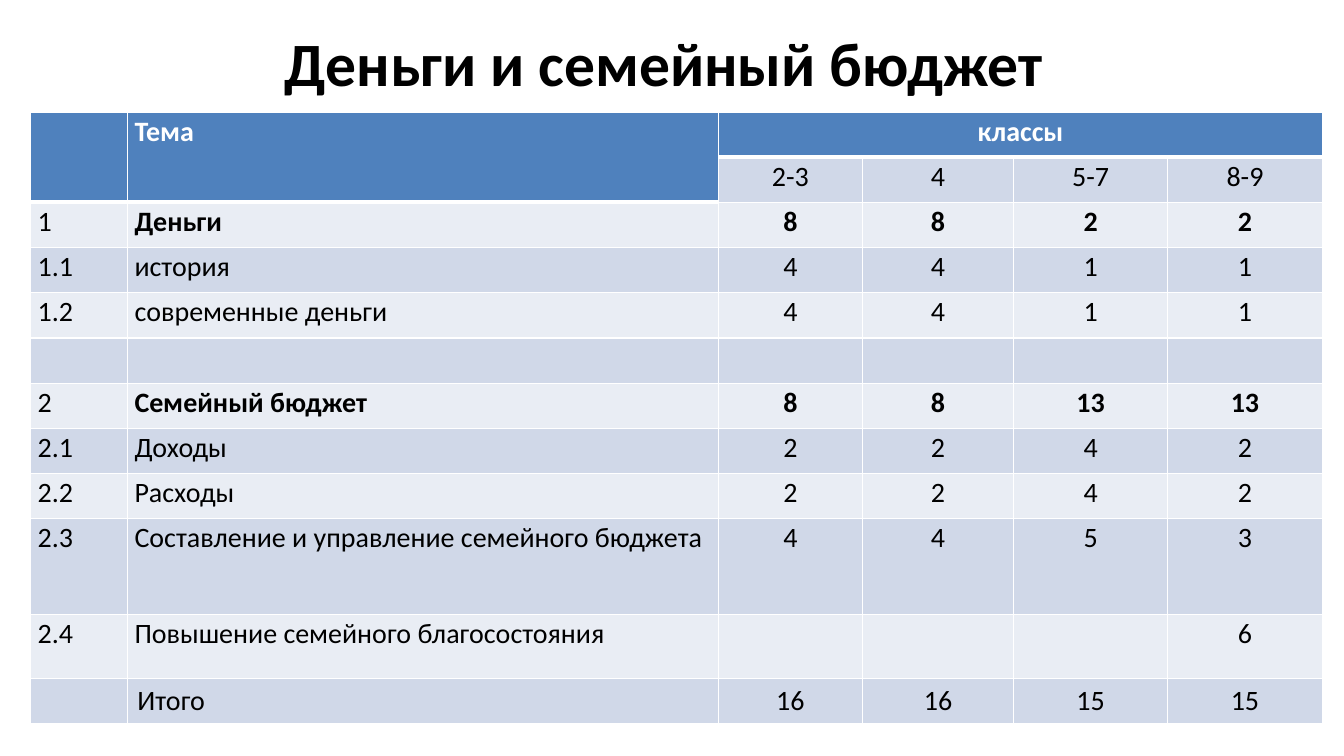
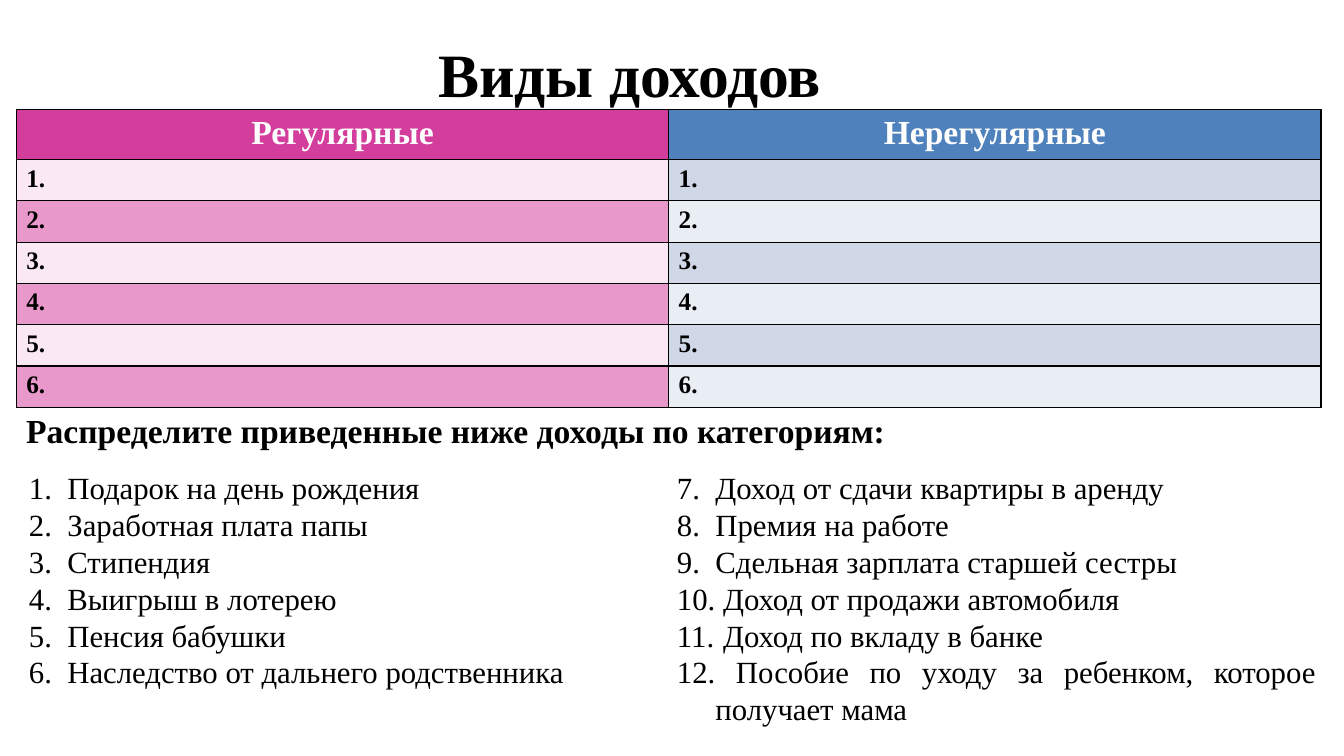
from dataclasses import dataclass

from pptx import Presentation
from pptx.dml.color import RGBColor as Rgb
from pptx.enum.text import MSO_ANCHOR as Anchor, PP_ALIGN as Align
from pptx.oxml.ns import qn
from pptx.util import Cm, Pt
from lxml.etree import SubElement as Sub


# Theme
@dataclass(frozen=True)
class Theme:
    sans: str = "Calibri"
    serif: str = "Times New Roman"
    black: str = "000000"
    white: str = "FFFFFF"
    blue: str = "4F81BD"
    blues: tuple = ("D0D8E8", "E9EDF4")
    pink: str = "D33E9C"
    pinks: tuple = ("FAE9F4", "E898CA")
    title: int = 44
    head: int = 24
    item: int = 22
    plan: int = 20
    slot: int = 18


T = Theme()

# Content
PLAN_TITLE = "Деньги и семейный бюджет"
PLAN = [
    ("", "Тема", "классы", "", "", ""),
    ("", "", "2-3", "4", "5-7", "8-9"),
    ("1", "Деньги", "8", "8", "2", "2"),
    ("1.1", "история", "4", "4", "1", "1"),
    ("1.2", "современные деньги", "4", "4", "1", "1"),
    ("", "", "", "", "", ""),
    ("2", "Семейный бюджет", "8", "8", "13", "13"),
    ("2.1", "Доходы", "2", "2", "4", "2"),
    ("2.2", "Расходы", "2", "2", "4", "2"),
    ("2.3", "Составление и управление семейного бюджета", "4", "4", "5", "3"),
    ("2.4", "Повышение семейного благосостояния", "", "", "", "6"),
    ("", "Итого", "16", "16", "15", "15"),
]
PLAN_COLS = (2.44, 14.9, 3.62, 3.82, 3.87, 3.91)
PLAN_ROWS = (1.14,) * 9 + (2.42, 1.6, 1.14)
BOLD_ROWS = (2, 6)

KIND_TITLE = "Виды доходов"
KINDS = [("Регулярные", T.pink, T.pinks), ("Нерегулярные", T.blue, T.blues)]
SLOTS = 6
TASK = "Распределите приведенные ниже доходы по категориям:"
INCOME = [
    ["Подарок на день рождения", "Заработная плата папы", "Стипендия",
     "Выигрыш в лотерею", "Пенсия бабушки",
     "Наследство от дальнего родственника"],
    ["Доход от сдачи квартиры в аренду", "Премия на работе",
     "Сдельная зарплата старшей сестры", " Доход от продажи автомобиля",
     " Доход по вкладу в банке",
     " Пособие по уходу за ребенком, которое получает мама"],
]


# Text helpers
def write(par, text, size, font, color=T.black, bold=False, align=Align.LEFT):
    par.alignment = align
    run = par.add_run()
    run.text = text
    run.font.size, run.font.name, run.font.bold = Pt(size), font, bold
    run.font.color.rgb = Rgb.from_string(color)


def add_box(slide, left, top, width, height, anchor=Anchor.TOP):
    box = slide.shapes.add_textbox(Cm(left), Cm(top), Cm(width), Cm(height))
    box.text_frame.word_wrap = True
    box.text_frame.vertical_anchor = anchor
    return box.text_frame


def add_title(slide, text, font, left, top, width, height):
    frame = add_box(slide, left, top, width, height, Anchor.MIDDLE)
    write(frame.paragraphs[0], text, T.title, font, bold=True,
          align=Align.CENTER)


def number(par, start):
    props = par._p.get_or_add_pPr()
    props.set("marL", str(Cm(0.97)))
    props.set("indent", str(-Cm(0.97)))
    Sub(props, qn("a:buFont"), typeface="+mj-lt")
    Sub(props, qn("a:buAutoNum"), type="arabicPeriod", startAt=str(start))


# Table helpers
def add_grid(slide, left, top, cols, rows):
    grid = slide.shapes.add_table(len(rows), len(cols), Cm(left), Cm(top),
                                  Cm(sum(cols)), Cm(sum(rows))).table
    grid.first_row = grid.horz_banding = False
    for col, width in zip(grid.columns, cols):
        col.width = Cm(width)
    for row, height in zip(grid.rows, rows):
        row.height = Cm(height)
    return grid


def paint(cell, fill, line, above=1, below=1):
    props = cell._tc.get_or_add_tcPr()
    for side, width in (("L", 1), ("R", 1), ("T", above), ("B", below)):
        edge = Sub(props, qn(f"a:ln{side}"), w=str(Pt(width)))
        Sub(Sub(edge, qn("a:solidFill")), qn("a:srgbClr"), val=line)
    cell.fill.solid()
    cell.fill.fore_color.rgb = Rgb.from_string(fill)


# Slides
def plan_slide(slide):
    add_title(slide, PLAN_TITLE, T.sans, 1.5, 0.76, 30.48, 1.6)
    grid = add_grid(slide, 0.77, 2.82, PLAN_COLS, PLAN_ROWS)
    last = len(PLAN) - 1
    for r, row in enumerate(PLAN):
        for c, text in enumerate(row):
            cell = grid.cell(r, c)
            depth = 2 if c < 2 else 1  # header rows in this column
            head = r < depth
            paint(cell, T.blue if head else T.blues[(r + 1) % 2], T.white,
                  above=3 if r == depth else 1,
                  below=3 if r == depth - 1 else 1)
            if r < last:
                cell.margin_left = cell.margin_right = Cm(0.18)
                cell.margin_top = cell.margin_bottom = 0
            if text:
                par = cell.text_frame.paragraphs[0]
                par.line_spacing = 1.07 if r < last else 1.0
                write(par, text, T.plan, T.sans,
                      T.white if head else T.black,
                      head or (r in BOLD_ROWS and c > 0),
                      Align.CENTER if c > 1 else Align.LEFT)
    for c in (0, 1):
        grid.cell(0, c).merge(grid.cell(1, c))
    grid.cell(0, 2).merge(grid.cell(0, 5))


def kind_slide(slide):
    add_title(slide, KIND_TITLE, T.serif, 1.27, 0, 29.21, 3.68)
    grid = add_grid(slide, 0.41, 2.75, (16.44,) * 2,
                    (1.19,) + (1.04,) * SLOTS)
    for c, (name, color, bands) in enumerate(KINDS):
        cell = grid.cell(0, c)
        paint(cell, color, T.black)
        write(cell.text_frame.paragraphs[0], name, T.head, T.serif, T.white,
              True, Align.CENTER)
        for r in range(1, SLOTS + 1):
            cell = grid.cell(r, c)
            paint(cell, bands[(r - 1) % 2], T.black)
            write(cell.text_frame.paragraphs[0], f"{r}.", T.slot, T.serif,
                  bold=True)

    # Task and numbered incomes
    task = add_box(slide, 0.41, 10.21, 32.89, 1.27)
    write(task.paragraphs[0], TASK, T.head, T.serif, bold=True,
          align=Align.JUSTIFY)
    start = 1
    for c, items in enumerate(INCOME):
        frame = add_box(slide, 0.48 + c * 16.33, 11.68, 16.6, 6.83)
        for i, text in enumerate(items):
            par = frame.add_paragraph() if i else frame.paragraphs[0]
            write(par, text, T.item, T.serif, align=Align.JUSTIFY)
            number(par, start)
        start += len(items)


def main():
    deck = Presentation()
    deck.slide_width, deck.slide_height = Cm(33.87), Cm(19.05)
    for build in (plan_slide, kind_slide):
        build(deck.slides.add_slide(deck.slide_layouts[6]))
    deck.save("out.pptx")


if __name__ == "__main__":
    main()
